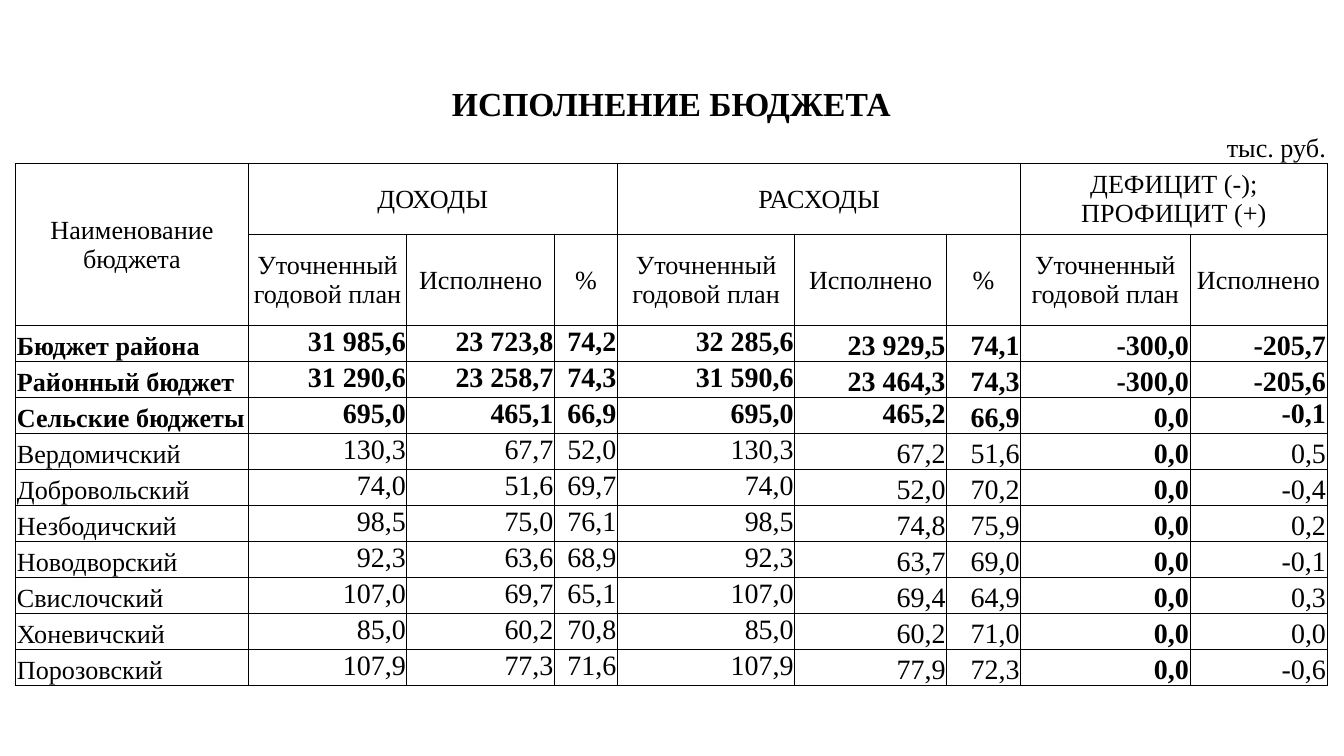
from dataclasses import dataclass
from itertools import product

from lxml.etree import SubElement
from pptx import Presentation
from pptx.dml.color import RGBColor
from pptx.enum.text import MSO_ANCHOR as Anchor, PP_ALIGN as Align
from pptx.oxml.ns import qn
from pptx.table import Table, _Cell as Cell
from pptx.util import Cm, Pt

FONT = "Times New Roman"
BLACK = "000000"
NO_STYLE = "{2D5ABB26-0587-4C30-8999-92F81FD0307C}"
COLUMN_WIDTHS = (4.39, 2.57, 0.43, 1.85, 0.94, 1.19, 3.35, 2.29, 0.58, 1.4, 3.2, 0.3, 2.29)
TITLE_HEIGHT, GROUP_HEIGHT, MEASURE_HEIGHT, LINE_HEIGHT = 0.86, 1.33, 1.73, 0.68
UNIT_ROW, GROUP_ROW, MEASURE_ROW, FIRST_BUDGET_ROW = 1, 2, 3, 4
PLAN, DONE = "Уточненный годовой план", "Исполнено"
MEASURES = (PLAN, DONE, "%", PLAN, DONE, "%", PLAN, DONE)
MEASURE_SPANS = ((1, 2), (3, 2), (5, 1), (6, 1), (7, 2), (9, 1), (10, 1), (11, 2))
UNIT_SPANS = ((2, 2), (4, 2), (8, 2), (10, 2))
TOP_COLUMNS = {1, 3, 5, 6}
DEFICIT_PLAN_COLUMN = 10


@dataclass(frozen=True)
class Group:
    caption: str
    column: int
    span: int


@dataclass(frozen=True)
class Budget:
    name: str
    values: str
    bold: bool = False
    raised: frozenset = frozenset()


GROUPS = (
    Group("ДОХОДЫ", 1, 5),
    Group("РАСХОДЫ", 6, 4),
    Group("ДЕФИЦИТ (-); ПРОФИЦИТ (+)", 10, 3),
)
BUDGETS = (
    Budget("Бюджет района", "31 985,6|23 723,8|74,2|32 285,6|23 929,5|74,1|-300,0|-205,7", True),
    Budget("Районный бюджет", "31 290,6|23 258,7|74,3|31 590,6|23 464,3|74,3|-300,0|-205,6", True),
    Budget("Сельские бюджеты", "695,0|465,1|66,9|695,0|465,2|66,9|0,0|-0,1", True, frozenset({7, 11})),
    Budget("Вердомичский", "130,3|67,7|52,0|130,3|67,2|51,6|0,0|0,5"),
    Budget("Добровольский", "74,0|51,6|69,7|74,0|52,0|70,2|0,0|-0,4"),
    Budget("Незбодичский", "98,5|75,0|76,1|98,5|74,8|75,9|0,0|0,2"),
    Budget("Новодворский", "92,3|63,6|68,9|92,3|63,7|69,0|0,0|-0,1"),
    Budget("Свислочский", "107,0|69,7|65,1|107,0|69,4|64,9|0,0|0,3"),
    Budget("Хоневичский", "85,0|60,2|70,8|85,0|60,2|71,0|0,0|0,0"),
    Budget("Порозовский", "107,9|77,3|71,6|107,9|77,9|72,3|0,0|-0,6"),
)


def color(value: str) -> RGBColor:
    return RGBColor.from_string(value)


def write(cell: Cell, text: str, size: float = 14, bold: bool = False,
          align: Align = Align.CENTER, anchor: Anchor = Anchor.MIDDLE) -> None:
    cell.vertical_anchor = anchor
    paragraph = cell.text_frame.paragraphs[0]
    paragraph.alignment = align
    run = paragraph.add_run()
    run.text = text
    run.font.name, run.font.size, run.font.bold = FONT, Pt(size), bold
    run.font.color.rgb = color(BLACK)


def merge(table: Table, row: int, column: int, columns: int, rows: int = 1) -> Cell:
    cell = table.cell(row, column)
    if columns * rows > 1:
        cell.merge(table.cell(row + rows - 1, column + columns - 1))
    return cell


def prepare(cell: Cell, sides: str) -> None:
    cell.margin_left = cell.margin_right = cell.margin_top = Cm(0.02)
    cell.margin_bottom = 0
    properties = cell._tc.get_or_add_tcPr()
    for side in "LRTB":
        line = SubElement(properties, qn(f"a:ln{side}"), w=str(Pt(0.5)))
        if side in sides:
            fill = SubElement(line, qn("a:solidFill"))
            SubElement(fill, qn("a:srgbClr"), val=BLACK)
        else:
            SubElement(line, qn("a:noFill"))
    cell.fill.background()
    SubElement(cell.text_frame.paragraphs[0]._p, qn("a:endParaRPr"), sz="1000")


def add_headings(table: Table) -> None:
    write(merge(table, 0, 0, len(COLUMN_WIDTHS)), "ИСПОЛНЕНИЕ БЮДЖЕТА", 18, True)
    for column, span in UNIT_SPANS:
        merge(table, UNIT_ROW, column, span)
    write(table.cell(UNIT_ROW, len(COLUMN_WIDTHS) - 1), "тыс. руб.",
          align=Align.RIGHT, anchor=Anchor.BOTTOM)
    write(merge(table, GROUP_ROW, 0, 1, 2), "Наименование бюджета")
    for group in GROUPS:
        write(merge(table, GROUP_ROW, group.column, group.span), group.caption)
    for measure, (column, span) in zip(MEASURES, MEASURE_SPANS):
        write(merge(table, MEASURE_ROW, column, span), measure)


def add_budget(table: Table, row: int, budget: Budget) -> None:
    write(table.cell(row, 0), budget.name, 14, budget.bold, Align.LEFT, Anchor.BOTTOM)
    for value, (column, span) in zip(budget.values.split("|"), MEASURE_SPANS):
        anchor = Anchor.TOP if column in TOP_COLUMNS | budget.raised else Anchor.BOTTOM
        bold = budget.bold or column == DEFICIT_PLAN_COLUMN
        write(merge(table, row, column, span), value, 15, bold, Align.RIGHT, anchor)


def main() -> None:
    """Build the budget execution slide."""
    deck = Presentation()
    deck.slide_width, deck.slide_height = Cm(25.4), Cm(14.28)
    slide = deck.slides.add_slide(deck.slide_layouts[6])
    heights = (TITLE_HEIGHT, LINE_HEIGHT, GROUP_HEIGHT, MEASURE_HEIGHT) + (LINE_HEIGHT,) * len(BUDGETS)
    frame = slide.shapes.add_table(len(heights), len(COLUMN_WIDTHS), Cm(0.3), Cm(1.55),
                                   Cm(sum(COLUMN_WIDTHS)), Cm(sum(heights)))
    table = frame.table
    table.first_row = table.horz_banding = False
    frame._element.find(".//" + qn("a:tableStyleId")).text = NO_STYLE
    for column, width in zip(table.columns, COLUMN_WIDTHS):
        column.width = Cm(width)
    for row, height in zip(table.rows, heights):
        row.height = Cm(height)
    for row, column in product(range(len(heights)), range(len(COLUMN_WIDTHS))):
        sides = "LRTB" if row >= GROUP_ROW else "B" if row == UNIT_ROW else ""
        prepare(table.cell(row, column), sides)
    add_headings(table)
    for row, budget in enumerate(BUDGETS, FIRST_BUDGET_ROW):
        add_budget(table, row, budget)
    deck.save("out.pptx")


if __name__ == "__main__":
    main()
